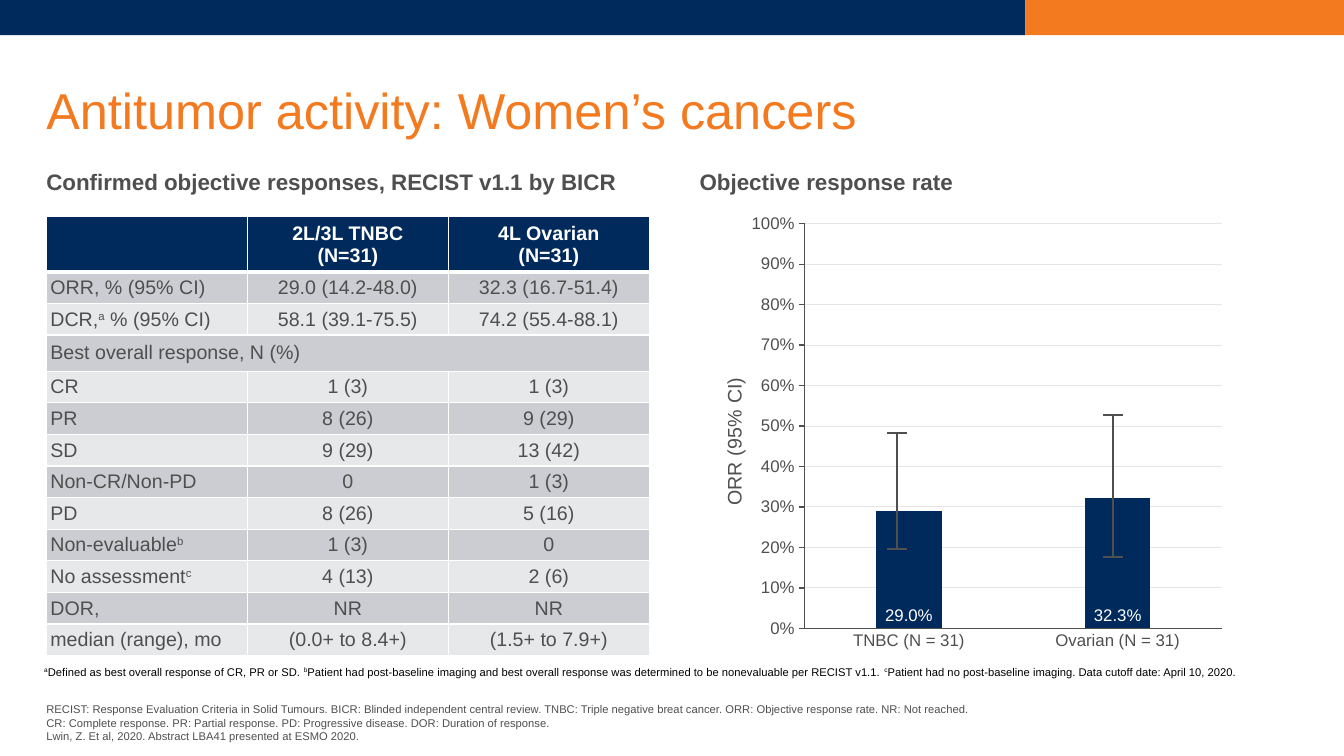
from lxml.etree import SubElement
from pptx import Presentation
from pptx.chart.data import CategoryChartData
from pptx.dml.color import RGBColor
from pptx.enum.chart import XL_CHART_TYPE, XL_LABEL_POSITION, XL_TICK_MARK
from pptx.enum.shapes import MSO_CONNECTOR, MSO_SHAPE
from pptx.enum.text import MSO_ANCHOR, MSO_AUTO_SIZE, PP_ALIGN
from pptx.oxml import parse_xml
from pptx.oxml.ns import nsdecls, qn
from pptx.util import Inches, Pt

NAVY = RGBColor(0x00, 0x2A, 0x5C)
ORANGE = RGBColor(0xF4, 0x7A, 0x20)
GREY = RGBColor(0x4E, 0x4F, 0x4E)
WHITE = RGBColor(0xFF, 0xFF, 0xFF)
BLACK = RGBColor(0x00, 0x00, 0x00)
BAND_DARK = RGBColor(0xCC, 0xCD, 0xD2)
BAND_LIGHT = RGBColor(0xE7, 0xE8, 0xEA)
GRID = RGBColor(0xE4, 0xE5, 0xE4)

RESPONSES = [
    ("", "2L/3L TNBC\n(N=31)", "4L Ovarian\n(N=31)"),
    ("ORR, % (95% CI)", "29.0 (14.2-48.0)", "32.3 (16.7-51.4)"),
    ("DCR,^a^ % (95% CI)", "58.1 (39.1-75.5)", "74.2 (55.4-88.1)"),
    ("Best overall response, N (%)",),
    ("CR", "1 (3)", "1 (3)"),
    ("PR", "8 (26)", "9 (29)"),
    ("SD", "9 (29)", "13 (42)"),
    ("Non-CR/Non-PD", "0", "1 (3)"),
    ("PD", "8 (26)", "5 (16)"),
    ("Non-evaluable^b^", "1 (3)", "0"),
    ("No assessment^c^", "4 (13)", "2 (6)"),
    ("DOR,", "NR", "NR"),
    ("median (range), mo", "(0.0+ to 8.4+)", "(1.5+ to 7.9+)"),
]


def box(*lengths):
    return [Inches(v) for v in lengths]


def set_all(target, **values):
    for name, value in values.items():
        setattr(target, name, value)


class ResultsSlide:
    font_name = "Arial"

    def __init__(self, prs):
        self.s = prs.slides.add_slide(prs.slide_layouts[5])

    def font(self, font, size, color, bold=False):
        set_all(font, name=self.font_name, size=Pt(size), bold=bold)
        font.color.rgb = color

    def fill_text(self, tf, text, size, color, bold=False, align=PP_ALIGN.LEFT):
        for i, line in enumerate(text.split("\n")):
            p = tf.add_paragraph() if i else tf.paragraphs[0]
            p.alignment = align
            for j, part in enumerate(line.split("^")):
                if part:
                    r = p.add_run()
                    r.text = part
                    self.font(r.font, size, color, bold)
                    if j % 2:
                        r._r.get_or_add_rPr().set("baseline", "30000")

    def band(self, at, color):
        sp = self.s.shapes.add_shape(MSO_SHAPE.RECTANGLE, *box(*at))
        sp.shadow.inherit = False
        sp.fill.solid()
        sp.fill.fore_color.rgb = color
        sp.line.fill.background()

    def title(self, at, text):
        sp = self.s.shapes.title
        set_all(sp, **dict(zip(("left", "top", "width", "height"), box(*at))))
        tf = sp.text_frame
        set_all(tf, margin_left=0, margin_top=0, margin_right=0, margin_bottom=0,
                word_wrap=True, auto_size=MSO_AUTO_SIZE.NONE,
                vertical_anchor=MSO_ANCHOR.MIDDLE)
        self.fill_text(tf, text, 36, ORANGE)
        tf.paragraphs[0].line_spacing = 0.9

    def text(self, at, text, size, color, bold=False, **frame):
        tf = self.s.shapes.add_textbox(*box(*at)).text_frame
        set_all(tf, word_wrap=True, **frame)
        self.fill_text(tf, text, size, color, bold)

    def borders(self, cell, bottom):
        tcPr = cell._tc.get_or_add_tcPr()
        sides = (("lnL", 1), ("lnR", 1), ("lnT", 1), ("lnB", bottom))
        for i, (side, width) in enumerate(sides):
            tcPr.insert(i, parse_xml(
                f'<a:{side} {nsdecls("a")} w="{Pt(width)}"><a:solidFill>'
                f'<a:srgbClr val="{WHITE}"/></a:solidFill></a:{side}>'))

    def table(self, at, rows):
        tbl = self.s.shapes.add_table(len(rows), 3, *box(*at)).table
        tbl.horz_banding = False
        for col in tbl.columns:
            col.width = Inches(at[2] / 3)
        margin = Inches(0.04)
        for i, values in enumerate(rows):
            header, merged = i == 0, len(values) == 1
            tbl.rows[i].height = Inches(0.54 if header else 0.36 if merged else 0.31)
            fill = NAVY if header else BAND_DARK if i % 2 else BAND_LIGHT
            for j in range(3):
                cell = tbl.cell(i, j)
                set_all(cell, margin_left=margin, margin_right=margin, margin_top=margin,
                        margin_bottom=margin, vertical_anchor=MSO_ANCHOR.MIDDLE)
                cell.fill.solid()
                cell.fill.fore_color.rgb = fill
                self.borders(cell, 3 if header else 1)
                if j < len(values):
                    self.fill_text(cell.text_frame, values[j], 14,
                                   WHITE if header else GREY, header,
                                   PP_ALIGN.CENTER if j else PP_ALIGN.LEFT)
            if merged:
                tbl.cell(i, 0).merge(tbl.cell(i, 2))

    def layout(self, parent, **values):
        old = parent.find(qn("c:layout"))
        if old is not None:
            parent.remove(old)
        layout = parse_xml(f'<c:layout {nsdecls("c")}/>')
        manual = SubElement(layout, qn("c:manualLayout"))
        for tag, value in values.items():
            SubElement(manual, qn(f"c:{tag}")).set("val", str(value))
        return layout

    def chart(self, at, rates):
        data = CategoryChartData(number_format="0.0%")
        data.categories = list(rates)
        data.add_series("Series 1", list(rates.values()))
        chart = self.s.shapes.add_chart(
            XL_CHART_TYPE.COLUMN_CLUSTERED, *box(*at), data).chart
        set_all(chart, has_title=False, has_legend=False)
        self.font(chart.font, 10, GREY)
        plot = chart.plots[0]
        set_all(plot, gap_width=219, overlap=-27, vary_by_categories=False,
                has_data_labels=True)
        set_all(plot.data_labels, show_value=True, number_format="0.0%",
                number_format_is_linked=False, position=XL_LABEL_POSITION.INSIDE_BASE)
        self.font(plot.data_labels.font, 12, WHITE)
        bars = plot.series[0].format.fill
        bars.solid()
        bars.fore_color.rgb = NAVY
        cat, val = chart.category_axis, chart.value_axis
        for axis, tick in ((cat, XL_TICK_MARK.NONE), (val, XL_TICK_MARK.OUTSIDE)):
            set_all(axis, major_tick_mark=tick, minor_tick_mark=XL_TICK_MARK.NONE)
            self.font(axis.tick_labels.font, 12, GREY)
            axis.format.line.color.rgb = GREY
            axis.format.line.width = Pt(1)
        set_all(val, minimum_scale=0, maximum_scale=1, major_unit=0.1,
                has_major_gridlines=True)
        set_all(val.tick_labels, number_format="0%", number_format_is_linked=False)
        val.major_gridlines.format.line.color.rgb = GRID
        val.major_gridlines.format.line.width = Pt(0.75)
        self.fill_text(val.axis_title.text_frame, "ORR (95% CI)", 14, GREY)
        title = val.axis_title._element
        title.find(qn("c:tx")).addnext(
            self.layout(title, xMode="edge", yMode="edge", x=0.05, y=0.37))
        area = chart._chartSpace.chart.plotArea
        area.insert(0, self.layout(area, layoutTarget="inner", xMode="edge", yMode="edge",
                                   x=0.21, y=0.04, w=0.77, h=0.89))

    def error_bar(self, x, top, bottom):
        grp = self.s.shapes.add_group_shape()
        for ends in ((x, top, x, bottom), (x - 0.1, top, x + 0.1, top),
                     (x - 0.1, bottom, x + 0.1, bottom)):
            line = grp.shapes.add_connector(MSO_CONNECTOR.STRAIGHT, *box(*ends))
            line.line.color.rgb = GREY
            line.line.width = Pt(1.5)
            SubElement(line._element.spPr, qn("a:effectLst"))


def main():
    prs = Presentation()
    prs.slide_width, prs.slide_height = box(13.33, 7.5)
    slide = ResultsSlide(prs)
    slide.band((0, 0, 10.17, 0.35), NAVY)
    slide.band((10.17, 0, 3.16, 0.35), ORANGE)
    slide.title((0.46, 0.4, 12.43, 1.45), "Antitumor activity: Women’s cancers")
    slide.text((0.46, 6.97, 9.37, 0.4),
               "RECIST: Response Evaluation Criteria in Solid Tumours. BICR: Blinded "
               "independent central review. TNBC: Triple negative breat cancer. ORR: "
               "Objective response rate. NR: Not reached. CR: Complete response. PR: "
               "Partial response. PD: Progressive disease. DOR: Duration of response.\n"
               "Lwin, Z. Et al, 2020. Abstract LBA41 presented at ESMO 2020.",
               8, GREY, vertical_anchor=MSO_ANCHOR.BOTTOM, margin_left=0, margin_top=0,
               margin_right=0, margin_bottom=0)
    slide.text((0.46, 1.67, 11.94, 0.27),
               "Confirmed objective responses, RECIST v1.1 by BICR", 16, GREY, True,
               margin_left=0, margin_top=0, margin_bottom=0)
    slide.text((6.84, 1.62, 4.22, 0.37), "Objective response rate", 16, GREY, True)
    slide.text((0.34, 6.55, 12.17, 0.24),
               "^a^Defined as best overall response of CR, PR or SD. ^b^Patient had "
               "post-baseline imaging and best overall response was determined to be "
               "nonevaluable per RECIST v1.1. ^c^Patient had no post-baseline imaging. "
               "Data cutoff date: April 10, 2020.", 8, BLACK)
    slide.table((0.46, 2.15, 5.98, 4.34), RESPONSES)
    slide.chart((6.85, 2.04, 5.38, 4.51),
                {"TNBC (N = 31)": 0.29, "Ovarian (N = 31)": 0.323})
    slide.error_bar(8.9, 4.3, 5.45)
    slide.error_bar(11.04, 4.12, 5.53)
    prs.save("out.pptx")


if __name__ == "__main__":
    main()
